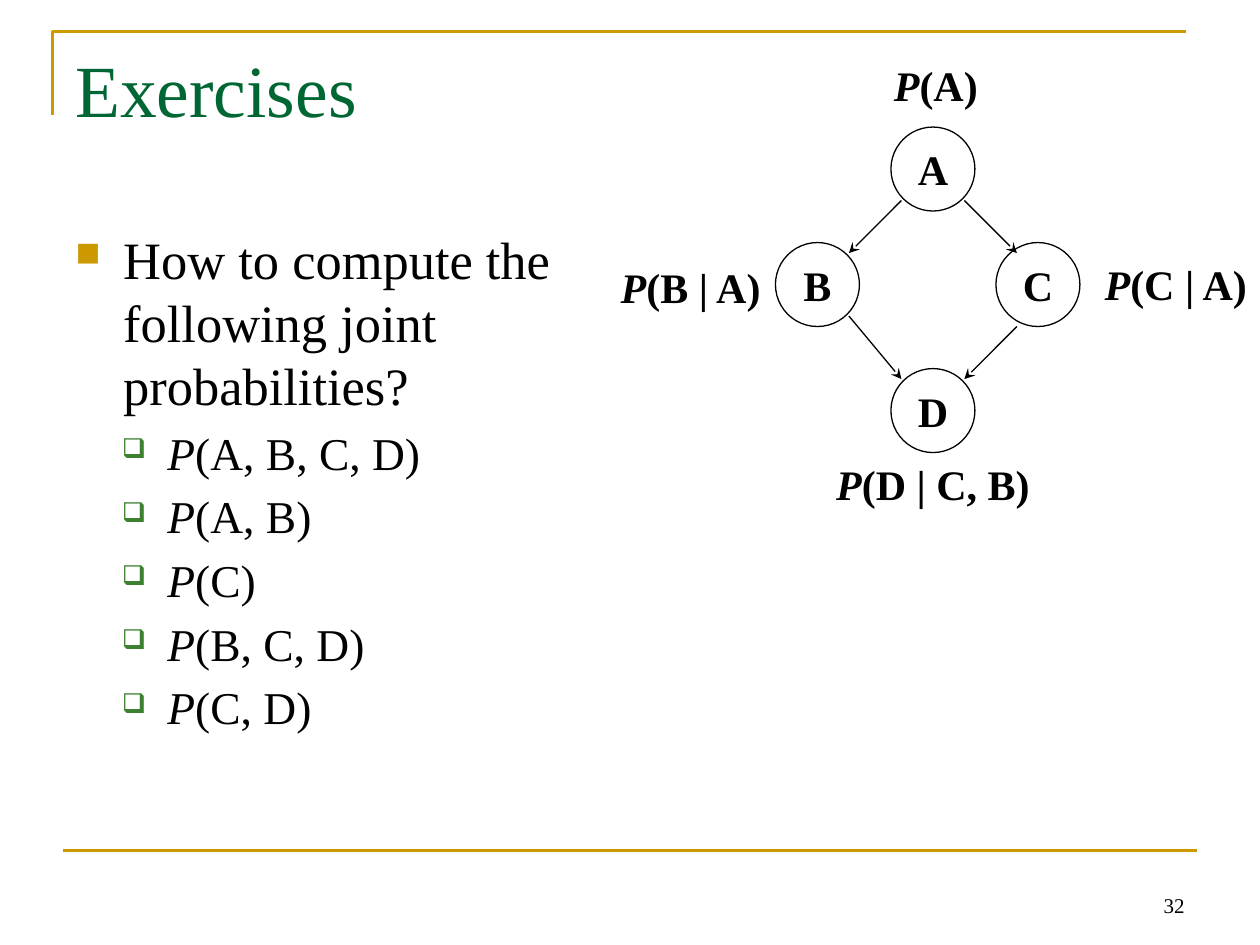
"""Build a slide with exercises on a four-node Bayesian network."""
from lxml.etree import SubElement
from pptx import Presentation
from pptx.dml.color import RGBColor
from pptx.enum.shapes import MSO_CONNECTOR, MSO_SHAPE
from pptx.enum.text import MSO_ANCHOR, PP_ALIGN
from pptx.oxml.ns import qn
from pptx.util import Inches, Pt

GOLD = RGBColor(0xCC, 0x99, 0x00)
GREEN = RGBColor(0x00, 0x66, 0x33)
BLACK = RGBColor(0, 0, 0)
COLS, ROWS = 120, 90

deck = Presentation()
deck.slide_width, deck.slide_height = Inches(10), Inches(7.5)
unit_x, unit_y = deck.slide_width / COLS, deck.slide_height / ROWS
slide = deck.slides.add_slide(deck.slide_layouts[6])
shapes = slide.shapes


def grid(*cells):
    """Turn column and row pairs into lengths."""
    return [round(cell * (unit_y if i % 2 else unit_x)) for i, cell in enumerate(cells)]


def write(para, parts, size, color=BLACK, bold=False):
    """Add text parts, setting a lone P in italics."""
    for part in parts:
        run = para.add_run()
        run.text = part
        looks = {"name": "Times New Roman", "size": Pt(size), "bold": bold, "italic": part == "P"}
        for key, value in looks.items():
            setattr(run.font, key, value)
        run.font.color.rgb = color


pen = shapes.build_freeform(*grid(5, 11))
pen.add_line_segments([grid(5, 3), grid(113, 3)], close=False)
frame = pen.convert_to_shape()
frame.fill.background()
frame.shadow.inherit = False
rule = shapes.add_connector(MSO_CONNECTOR.STRAIGHT, *grid(6, 81, 114, 81))
SubElement(rule._element.spPr, qn("a:effectLst"))
for edge in (frame, rule):
    edge.line.color.rgb = GOLD
    edge.line.width = Pt(1.5)

title = shapes.add_textbox(*grid(6, 3.6, 108, 15)).text_frame
title.word_wrap = True
write(title.paragraphs[0], ["Exercises"], 42, GREEN)

body = shapes.add_textbox(*grid(6, 21, 54, 59.4)).text_frame
body.word_wrap = True
levels = [
    {"size": 30, "left": 0.38, "hang": 0.38, "mark": "■", "tint": "CC9900", "scale": 65},
    {"size": 26, "left": 0.73, "hang": 0.36, "mark": "❑", "tint": "3B812F", "scale": 60},
]
items = [
    (0, ["How to compute the following joint probabilities?"]),
    *[(1, ["P", args]) for args in ("(A, B, C, D)", "(A, B)", "(C)", "(B, C, D)", "(C, D)")],
]
for i, (depth, parts) in enumerate(items):
    level = levels[depth]
    para = body.add_paragraph() if i else body.paragraphs[0]
    para.level = depth
    para.space_before = Pt(level["size"] * 0.2)
    props = para._p.get_or_add_pPr()
    props.set("marL", str(Inches(level["left"])))
    props.set("indent", str(-Inches(level["hang"])))
    SubElement(SubElement(props, qn("a:buClr")), qn("a:srgbClr"), val=level["tint"])
    SubElement(props, qn("a:buSzPct"), val=str(level["scale"] * 1000))
    SubElement(props, qn("a:buChar"), char=level["mark"])
    write(para, parts, level["size"])

page = shapes.add_textbox(*grid(86, 82, 28, 6)).text_frame
page.word_wrap = True
page.vertical_anchor = MSO_ANCHOR.BOTTOM
page.paragraphs[0].alignment = PP_ALIGN.RIGHT
write(page.paragraphs[0], ["32"], 12)

nodes = {"A": (84.85, 12.1), "B": (73.85, 23.1), "C": (94.85, 23.1), "D": (84.85, 35.1)}
for name, (col, row) in nodes.items():
    node = shapes.add_shape(MSO_SHAPE.OVAL, *grid(col, row, 8, 8))
    node.shadow.inherit = False
    node.fill.background()
    node.line.color.rgb = BLACK
    node.line.width = Pt(0.75)
    text = node.text_frame
    text.word_wrap = False
    text.vertical_anchor = MSO_ANCHOR.MIDDLE
    text.paragraphs[0].alignment = PP_ALIGN.CENTER
    write(text.paragraphs[0], [name], 24, bold=True)

arrows = [
    ("A", (1, 7), "B", (7, 1)),
    ("B", (7, 7), "D", (1, 1)),
    ("C", (2, 8), "D", (7, 1)),
    ("A", (7, 7), "C", (2, 1)),
]
for start, out, end, into in arrows:
    ends = [a + b for a, b in zip(nodes[start] + nodes[end], out + into)]
    arrow = shapes.add_connector(MSO_CONNECTOR.STRAIGHT, *grid(*ends))
    arrow.line.color.rgb = BLACK
    arrow.line.width = Pt(0.75)
    SubElement(arrow.line._get_or_add_ln(), qn("a:tailEnd"), type="stealth")
    SubElement(arrow._element.spPr, qn("a:effectLst"))

labels = [
    ("(B | A)", 57.85, 24.35, 15.85),
    ("(C | A)", 103.95, 24, 16.05),
    ("(D | C, B)", 78.35, 43.1, 21),
    ("(A)", 83.85, 5.05, 10.55),
]
for args, col, row, width in labels:
    label = shapes.add_textbox(*grid(col, row, width, 6)).text_frame
    label.word_wrap = False
    label.paragraphs[0].alignment = PP_ALIGN.CENTER
    write(label.paragraphs[0], ["P", args], 24, bold=True)

deck.save("out.pptx")
